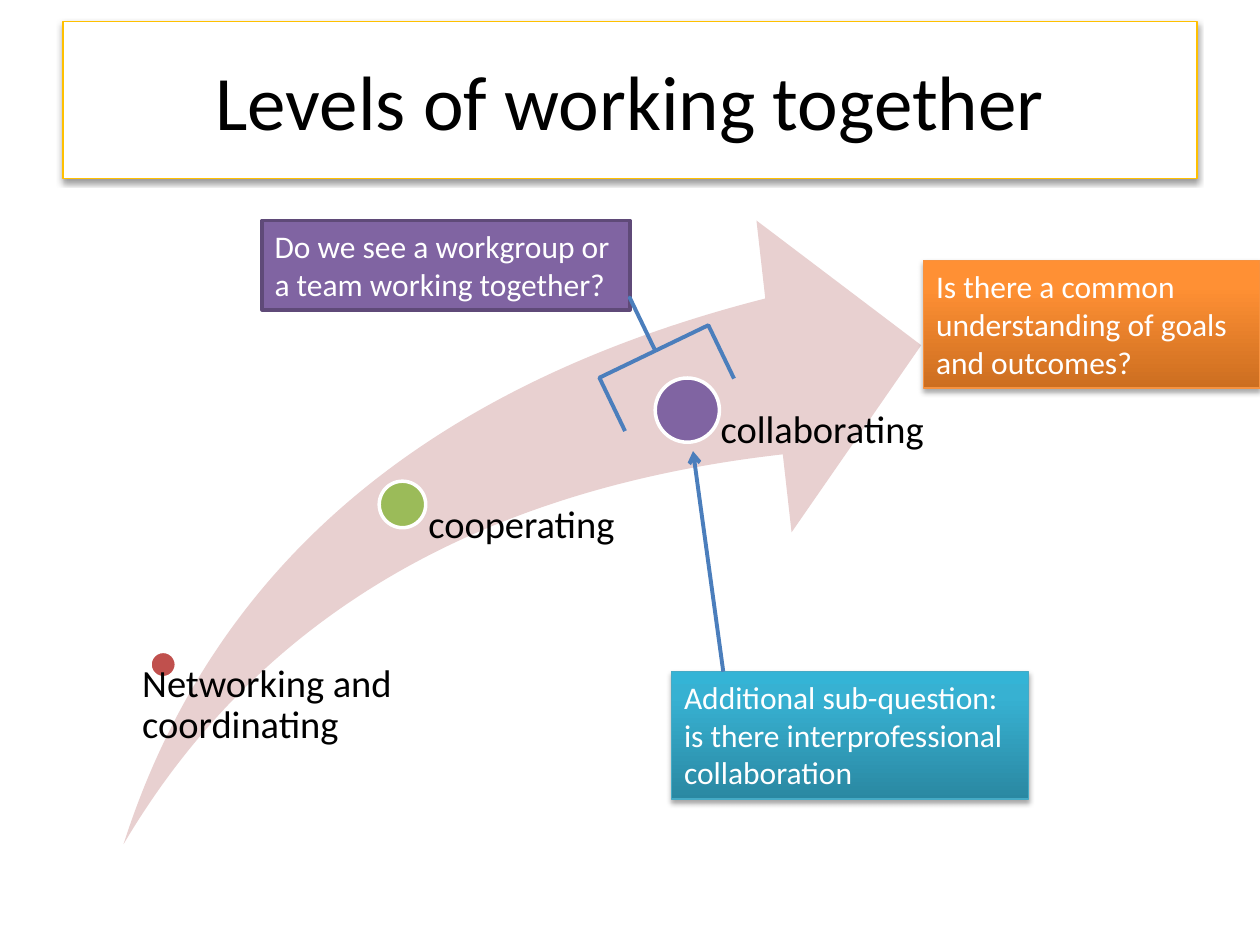
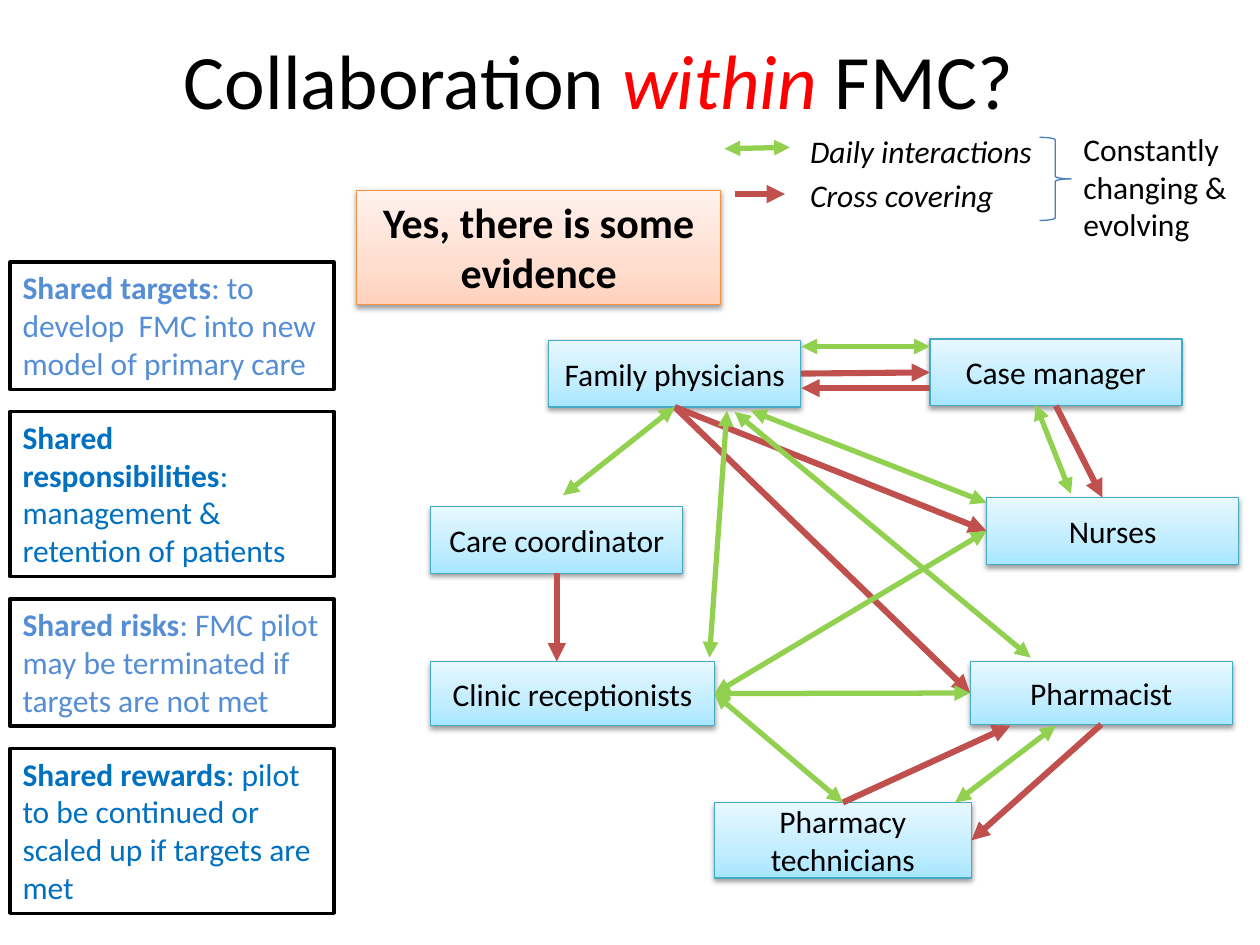
"""Build two slides on levels of working together and collaboration within an FMC."""
import dataclasses

import lxml.etree
import pptx
import pptx.dml.color
import pptx.enum.shapes
import pptx.enum.text
import pptx.oxml.ns
import pptx.util

Pt = pptx.util.Pt
qn = pptx.oxml.ns.qn
Preset = pptx.enum.shapes.MSO_SHAPE
Anchor = pptx.enum.text.MSO_ANCHOR
Align = pptx.enum.text.PP_ALIGN
TOP, LEFT, BOTTOM, RIGHT = range(4)


@dataclasses.dataclass(frozen=True)
class Theme:
    font: str = "Calibri"
    title_size: float = 44
    answer_size: float = 24
    level_size: float = 22
    body_size: float = 18
    black: str = "000000"
    white: str = "FFFFFF"
    gold: str = "FFC000"
    emphasis: str = "FF0000"
    swoosh: str = "E8D0D0"
    red: str = "C0504D"
    olive: str = "9BBB59"
    purple: str = "8064A2"
    purple_edge: str = "5F4A78"
    pointer: str = "4B7EBC"
    teal_edge: str = "46AAC5"
    orange_edge: str = "F69240"
    light_blue: str = "558ED5"
    strong_blue: str = "0070C0"
    green: str = "92D050"
    teal: tuple = ((0, "2A88A2"), (80, "37B1D2"), (100, "34B4D6"))
    orange: tuple = ((0, "CC6E20"), (80, "FF9034"), (100, "FF9136"))
    sky: tuple = ((0, "A7E6FF"), (35, "C1EDFF"), (100, "E7F8FF"))
    peach: tuple = ((0, "FFD2BD"), (35, "FFDED0"), (100, "FFF2ED"))


THEME = Theme()


def rgb(value):
    return pptx.dml.color.RGBColor.from_string(value)


def add_xml(parent, tag, **attributes):
    return lxml.etree.SubElement(parent, qn(tag), attributes)


class Deck:
    """Hold the style and the current slide, and draw each kind of element."""

    def __init__(self, theme):
        self.theme = theme
        self.deck = pptx.Presentation()
        self.deck.slide_width, self.deck.slide_height = Pt(720), Pt(540)
        self.slide = None

    def new_slide(self, box, title_runs):
        self.slide = self.deck.slides.add_slide(self.deck.slide_layouts[5])
        title = self.slide.shapes.title
        title.left, title.top, title.width, title.height = map(Pt, box)
        self.add_runs(title, title_runs, self.theme.title_size, Align.CENTER, Anchor.MIDDLE)
        return title

    def paint(self, shape, fill=None, edge=None, width=0.75, shadow=None):
        shape.shadow.inherit = False
        if fill is None:
            shape.fill.background()
        elif isinstance(fill, str):
            shape.fill.solid()
            shape.fill.fore_color.rgb = rgb(fill)
        else:
            self.blend(shape, fill)
        if edge:
            shape.line.color.rgb = rgb(edge)
            shape.line.width = Pt(width)
        else:
            shape.line.fill.background()
        if shadow:
            opacity, distance = shadow
            effects = shape.element.spPr.find(qn("a:effectLst"))
            cast = add_xml(effects, "a:outerShdw", blurRad=str(Pt(3.1)), dist=str(Pt(distance)),
                           dir="5400000", rotWithShape="0")
            tint = add_xml(cast, "a:srgbClr", val=self.theme.black)
            add_xml(tint, "a:alpha", val=str(opacity * 1000))

    def blend(self, shape, stops):
        shape.fill.gradient()
        shape.fill.gradient_angle = 90
        stop_list = shape.element.spPr.find(qn("a:gradFill")).find(qn("a:gsLst"))
        for stop in list(stop_list):
            stop_list.remove(stop)
        for percent, color in stops:
            stop = add_xml(stop_list, "a:gs", pos=str(percent * 1000))
            add_xml(stop, "a:srgbClr", val=color)

    def add_runs(self, shape, runs, size, align=Align.LEFT, anchor=Anchor.TOP):
        frame = shape.text_frame
        frame.word_wrap = True
        frame.vertical_anchor = anchor
        paragraph = frame.paragraphs[0]
        paragraph.alignment = align
        for text, color, bold, italic in runs:
            run = paragraph.add_run()
            run.text = text
            run.font.name = self.theme.font
            run.font.size = Pt(size)
            run.font.color.rgb = rgb(color)
            run.font.bold, run.font.italic = bold, italic
        return paragraph

    def shape(self, preset, box, adjustments=(), **style):
        shape = self.slide.shapes.add_shape(preset, *map(Pt, box))
        for index, value in enumerate(adjustments):
            shape.adjustments[index] = value
        self.paint(shape, **style)
        return shape

    def card(self, box, runs, size=None, align=Align.LEFT, anchor=Anchor.TOP, **style):
        card = self.shape(Preset.RECTANGLE, box, **style)
        self.add_runs(card, runs, size or self.theme.body_size, align, anchor)
        return card

    def label(self, box, text, size=None, italic=False, inset=None):
        label = self.slide.shapes.add_textbox(*map(Pt, box))
        runs = [(text, self.theme.black, False, italic)]
        paragraph = self.add_runs(label, runs, size or self.theme.body_size)
        if inset is not None:
            frame = label.text_frame
            frame.margin_left = Pt(inset)
            frame.margin_top = frame.margin_right = frame.margin_bottom = 0
            paragraph.line_spacing = 0.9

    def arrow(self, start, end, color, width, head=None, tail="triangle", anchors=None):
        glued = [isinstance(spot[0], str) for spot in (start, end)]
        points = [(0, 0) if fixed else spot for fixed, spot in zip(glued, (start, end))]
        arrow = self.slide.shapes.add_connector(
            pptx.enum.shapes.MSO_CONNECTOR.STRAIGHT, *map(Pt, points[0] + points[1]))
        if glued[0]:
            arrow.begin_connect(anchors[start[0]], start[1])
        if glued[1]:
            arrow.end_connect(anchors[end[0]], end[1])
        arrow.line.color.rgb = rgb(color)
        arrow.line.width = Pt(width)
        stroke = arrow.element.spPr.find(qn("a:ln"))
        for tag, kind in (("a:headEnd", head), ("a:tailEnd", tail)):
            if kind:
                add_xml(stroke, tag, type=kind)
        add_xml(arrow.element.spPr, "a:effectLst")

    def save(self):
        self.deck.save("out.pptx")


def build_levels(deck):
    theme = deck.theme
    title = deck.new_slide((36, 12.2, 648, 90),
                           [("Levels of working together", theme.black, False, False)])
    deck.paint(title, theme.white, theme.gold, shadow=(38, 1.6))
    deck.shape(Preset.SWOOSH_ARROW, (70.6, 126, 455.8, 356.4), (0.25, 0.25), fill=theme.swoosh)

    levels = [
        ("Networking and coordinating", theme.red, (85.7, 372.2), 15.1, (73.4, 379.4, 172.8, 103), 7.9),
        ("cooperating", theme.olive, (216.7, 275), 26.6, (230.4, 288.7, 136.8, 193.7), 14.4),
        ("collaborating", theme.purple, (374.4, 216), 36.7, (392.4, 234.7, 138, 247.7), 19.4),
    ]
    for name, color, corner, diameter, text_box, inset in levels:
        deck.shape(Preset.OVAL, corner + (diameter, diameter), fill=color, edge=theme.white, width=2)
        deck.label(text_box, name, theme.level_size, inset=inset)

    raised = (35, 1.8)
    questions = [
        ("Additional sub-question: is there interprofessional collaboration",
         (383.8, 383.8, 203.8, 72.7), theme.teal, theme.teal_edge, 0.75, raised),
        ("Is there a common understanding of goals and outcomes?",
         (527.8, 149, 192.2, 72.7), theme.orange, theme.orange_edge, 0.75, raised),
        ("Do we see a workgroup or a team working together?",
         (149.8, 126, 210.2, 51.1), theme.purple, theme.purple_edge, 2, None),
    ]
    for text, box, fill, edge, width, shadow in questions:
        deck.card(box, [(text, theme.white, False, False)],
                  fill=fill, edge=edge, width=width, shadow=shadow)

    team_bracket = deck.shape(Preset.LEFT_BRACE, (339.8, 166.3, 67.7, 69.1), (0, 0.487),
                              edge=theme.pointer, width=2.25)
    team_bracket.rotation = 64.3
    deck.arrow((413.3, 383.8), (396, 257.8), theme.pointer, 2.25, tail="arrow")


def build_collaboration(deck):
    theme = deck.theme
    deck.new_slide((18, 0, 648, 90), [
        ("Collaboration ", theme.black, False, False),
        ("within ", theme.emphasis, False, True),
        ("FMC?", theme.black, False, False),
    ])

    shared = [
        ("Shared targets", ": to develop  FMC into new model of primary care", theme.light_blue, 72.7),
        ("Shared responsibilities", ": management & retention of patients", theme.strong_blue, 94.3),
        ("Shared risks", ": FMC pilot may be terminated if targets are not met", theme.light_blue, 72.7),
        ("Shared rewards", ": pilot to be continued or scaled up if targets are met",
         theme.strong_blue, 94.3),
    ]
    top, gap = 149.8, 12.7
    for heading, detail, color, height in shared:
        deck.card((5.8, top, 185, height),
                  [(heading, color, True, False), (detail, color, False, False)],
                  fill=theme.white, edge=theme.black, width=2)
        top += height + gap

    raised = (38, 1.6)
    role_boxes = {
        "Family physicians": (313.6, 194.4, 144, 38.2),
        "Case manager": (531.4, 193.7, 144, 38.2),
        "Care coordinator": (246.2, 289.4, 144, 38.2),
        "Nurses": (563.8, 284.4, 144, 38.2),
        "Clinic receptionists": (246.2, 378, 162, 36.7),
        "Pharmacist": (554.4, 378, 149.8, 36),
        "Pharmacy technicians": (408.2, 458.6, 146.9, 43.2),
    }
    roles = {
        name: deck.card(box, [(name, theme.black, False, False)], align=Align.CENTER,
                        anchor=Anchor.MIDDLE, fill=theme.sky, edge=theme.teal_edge, shadow=raised)
        for name, box in role_boxes.items()
    }

    physicians_base = ("Family physicians", BOTTOM)
    nurses_side = ("Nurses", LEFT)
    pharmacist_side = ("Pharmacist", LEFT)
    reception_side = ("Clinic receptionists", RIGHT)
    technicians_top = ("Pharmacy technicians", TOP)
    cross_covering = [
        (("Family physicians", RIGHT), ("Case manager", LEFT)),
        (physicians_base, nurses_side),
        (physicians_base, pharmacist_side),
        ((531.4, 221.8), (457.9, 221.8)),
        (("Case manager", BOTTOM), (630, 284.4)),
        (("Care coordinator", BOTTOM), (318.2, 378)),
        (("Pharmacist", BOTTOM), ("Pharmacy technicians", RIGHT)),
        (technicians_top, (577.4, 414.7)),
        ((419.8, 110.9), (448.6, 110.9)),
    ]
    daily_interactions = [
        ((457.9, 198), (531.4, 198)),
        ((603.4, 414.7), (545.8, 458.6)),
        ((405.4, 375.8), (415.4, 234.7)),
        (reception_side, nurses_side),
        (reception_side, pharmacist_side),
        (reception_side, technicians_top),
        ((591.8, 231.1), (612, 282.2)),
        ((429.1, 234.7), (563.8, 287.3)),
        (physicians_base, (321.8, 283)),
        ((419.8, 235.4), (589, 375.8)),
        ((414, 85), (451.4, 84.2)),
    ]
    for start, end in cross_covering:
        deck.arrow(start, end, theme.red, 3.5, anchors=roles)
    for start, end in daily_interactions:
        deck.arrow(start, end, theme.green, 3, head="triangle", anchors=roles)

    deck.label((455.8, 97.2, 120.2, 28.8), "Cross covering", italic=True)
    deck.label((455.8, 72, 174.2, 28.8), "Daily interactions", italic=True)
    deck.shape(Preset.RIGHT_BRACE, (594, 78.5, 18, 47.5), edge=theme.pointer)
    deck.label((612, 70.6, 108, 72.7), "Constantly changing & evolving")
    deck.card((203.8, 108.7, 208.1, 65.5),
              [("Yes, there is some evidence", theme.black, True, False)],
              theme.answer_size, Align.CENTER,
              fill=theme.peach, edge=theme.orange_edge, shadow=raised)


def main():
    deck = Deck(THEME)
    build_levels(deck)
    build_collaboration(deck)
    deck.save()


if __name__ == "__main__":
    main()
